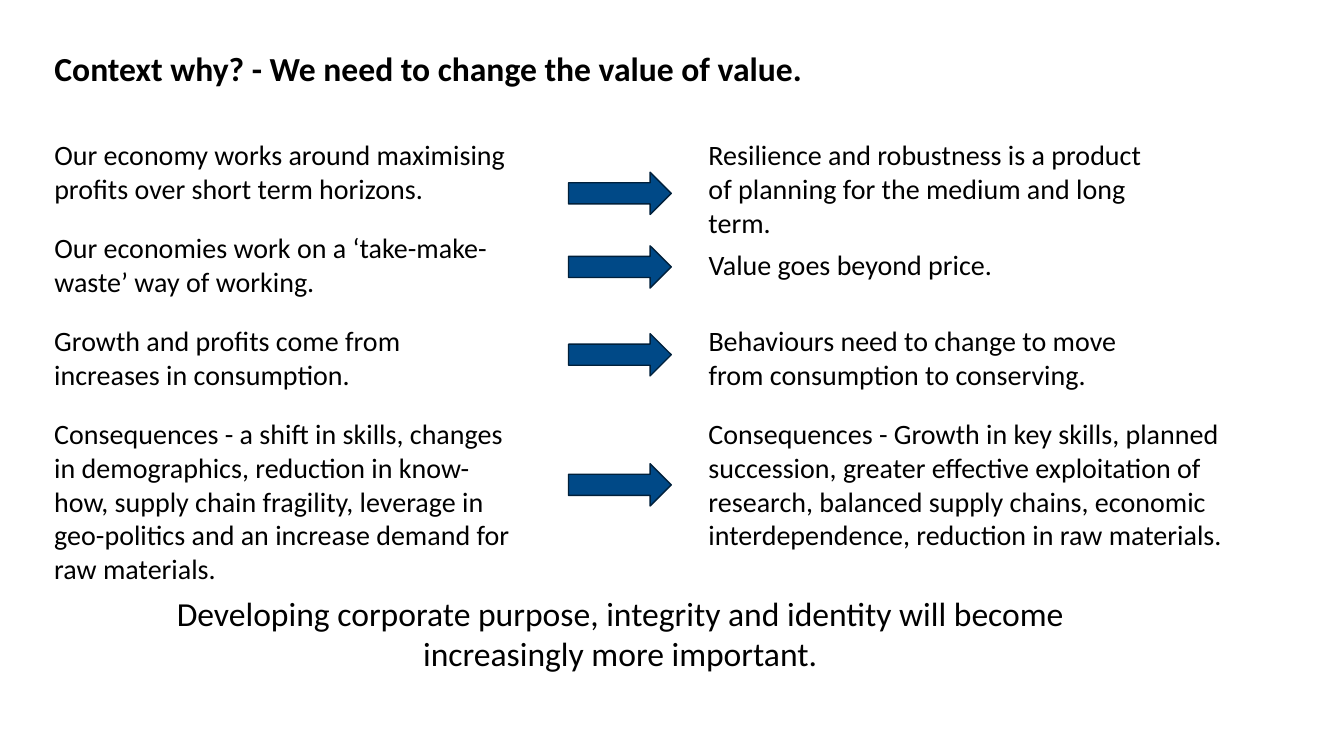
from pptx import Presentation
from pptx.dml.color import RGBColor
from pptx.enum import shapes, text
from pptx.util import Pt

BLACK = RGBColor(0x00, 0x00, 0x00)
WHITE = RGBColor(0xFF, 0xFF, 0xFF)
ARROW_BLUE = RGBColor(0x00, 0x49, 0x87)
ARROW_EDGE = RGBColor(0x00, 0x20, 0x3B)
FONT = "Calibri"
TITLE_ONLY = 5

ROW_PITCH = 66.4
FUTURE_X = 467.3  # offset of the right column from the left one
ARROW_X, ARROW_W, ARROW_H = 374.4, 73.4, 30.2

# today, width, future, width, future offset in row, arrow offset in row
SHIFTS = [
    ("Our economy works around maximising profits over short term horizons.", 339,
     "Resilience and robustness is a product of planning for the medium and long term.",
     333, 0, 28),
    ("Our economies work on a ‘take-make-waste’ way of working.", 325,
     "Value goes beyond price.", 278, 12, 14.2),
    ("Growth and profits come from increases in consumption.", 269,
     "Behaviours need to change to move from consumption to conserving.", 345, 0, 10.5),
    ("Consequences - a shift in skills, changes in demographics, reduction in know-how, "
     "supply chain fragility, leverage in geo-politics and an increase demand for raw "
     "materials.", 346,
     "Consequences - Growth in key skills, planned succession, greater effective "
     "exploitation of research, balanced supply chains, economic interdependence, "
     "reduction in raw materials.", 437, 0, 37),
]


def style(paragraph, size, bold=False, align=text.PP_ALIGN.LEFT):
    paragraph.alignment = align
    paragraph.font.name = FONT
    paragraph.font.size = Pt(size)
    paragraph.font.bold = bold
    paragraph.font.color.rgb = BLACK


def add_title(slide, left, top, width, height):
    title = slide.shapes.title
    title.left, title.top, title.width, title.height = map(Pt, (left, top, width, height))
    frame = title.text_frame
    frame.text = "Context why? - We need to change the value of value."
    frame.vertical_anchor = text.MSO_ANCHOR.TOP
    frame.auto_size = text.MSO_AUTO_SIZE.NONE
    frame.paragraphs[0].line_spacing = 0.9
    style(frame.paragraphs[0], 24, bold=True)


def add_statement(slide, words, left, top, width, height, size=20,
                  align=text.PP_ALIGN.LEFT):
    statement = slide.shapes.add_textbox(Pt(left), Pt(top), Pt(width), Pt(height))
    frame = statement.text_frame
    frame.word_wrap = True
    frame.auto_size = text.MSO_AUTO_SIZE.SHAPE_TO_FIT_TEXT
    frame.text = words
    style(frame.paragraphs[0], size, align=align)


def add_arrow(slide, left, top):
    arrow = slide.shapes.add_shape(shapes.MSO_SHAPE.RIGHT_ARROW,
                                   Pt(left), Pt(top), Pt(ARROW_W), Pt(ARROW_H))
    arrow.shadow.inherit = False
    arrow.fill.solid()
    arrow.fill.fore_color.rgb = ARROW_BLUE
    arrow.line.color.rgb = ARROW_EDGE
    arrow.line.width = Pt(1)


def add_shifts(slide, left, top):
    for row, (today, today_w, future, future_w, future_dy, arrow_dy) in enumerate(SHIFTS):
        row_top = top + row * ROW_PITCH
        add_statement(slide, today, left, row_top, today_w, 55.4)
        add_arrow(slide, left + ARROW_X, row_top + arrow_dy)
        add_statement(slide, future, left + FUTURE_X, row_top + future_dy, future_w, 55.4)


def main():
    deck = Presentation()
    deck.slide_width, deck.slide_height = Pt(960), Pt(540)
    slide = deck.slides.add_slide(deck.slide_layouts[TITLE_ONLY])
    slide.background.fill.solid()
    slide.background.fill.fore_color.rgb = WHITE

    # Heading
    add_title(slide, 31.7, 33.8, 612.7, 42.5)
    # Today's view, arrow and future view, row by row
    add_shifts(slide, 31.7, 95)
    # Conclusion
    add_statement(slide, "Developing corporate purpose, integrity and identity will become "
                  "increasingly more important.", 80.6, 419.8, 725, 65.5,
                  size=24, align=text.PP_ALIGN.CENTER)
    deck.save("out.pptx")


if __name__ == "__main__":
    main()
